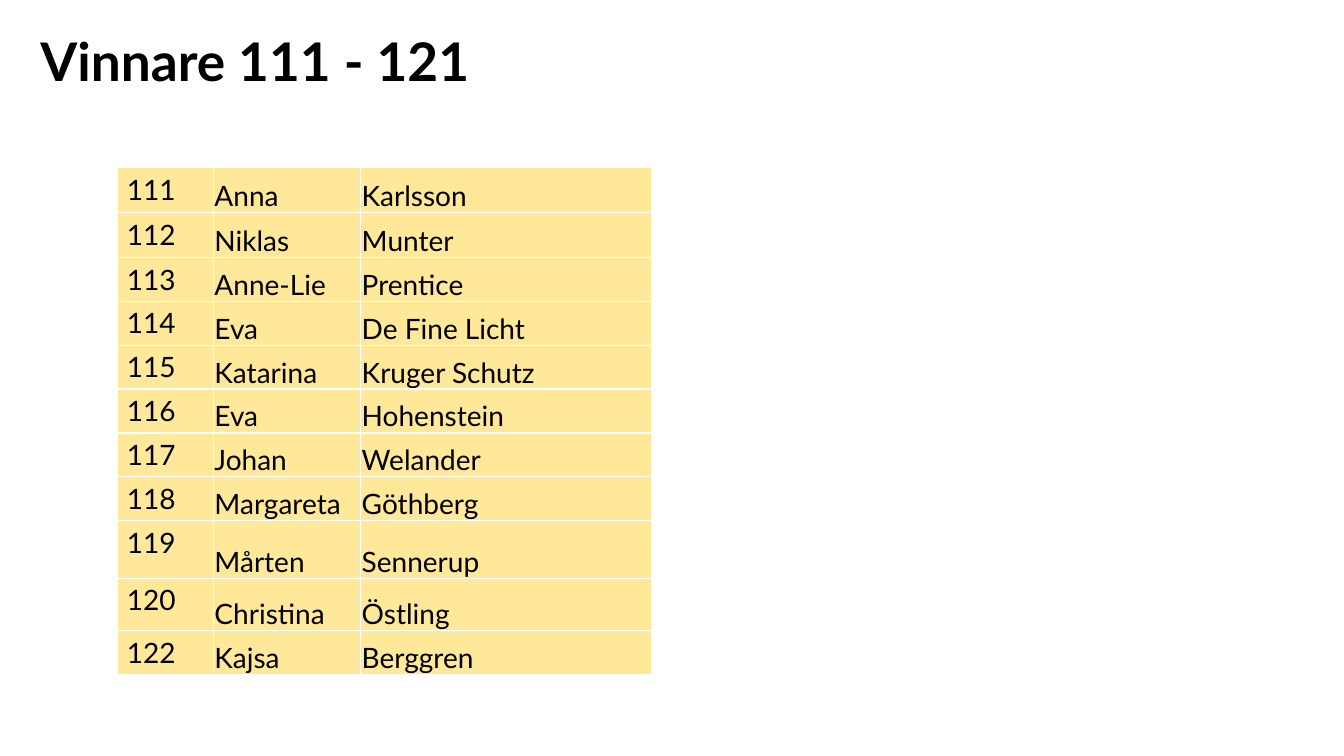
from lxml.etree import SubElement
from pptx import Presentation
from pptx.dml.color import RGBColor
from pptx.enum.text import MSO_ANCHOR, MSO_AUTO_SIZE, PP_ALIGN
from pptx.oxml.ns import qn
from pptx.util import Pt

FONT = "Lato"
BLACK, WHITE, YELLOW = "000000", "FFFFFF", "FFE899"

WINNERS = [
    ("111", "Anna", "Karlsson"),
    ("112", "Niklas", "Munter"),
    ("113", "Anne-Lie", "Prentice"),
    ("114", "Eva", "De Fine Licht"),
    ("115", "Katarina", "Kruger Schutz"),
    ("116", "Eva", "Hohenstein"),
    ("117", "Johan", "Welander"),
    ("118", "Margareta", "Göthberg"),
    ("119", "Mårten", "Sennerup"),
    ("120", "Christina", "Östling"),
    ("122", "Kajsa", "Berggren"),
]
COLUMN_WIDTHS = [69, 105.2, 207.4]
ROW_HEIGHT = 31.4
TALLER_ROWS = {"111": 32, "112": 32, "119": 41, "120": 37.6}


def color(hex_value):
    return RGBColor.from_string(hex_value)


def add_run(paragraph, text, size, bold=False):
    run = paragraph.add_run()
    run.text = text
    run.font.name = FONT
    run.font.size = Pt(size)
    run.font.bold = bold
    run.font.color.rgb = color(BLACK)


def set_margins(holder, left, top, right, bottom):
    holder.margin_left, holder.margin_top = Pt(left), Pt(top)
    holder.margin_right, holder.margin_bottom = Pt(right), Pt(bottom)


def add_title(slide, text):
    title = slide.shapes.title
    title.left, title.top = Pt(28.8), Pt(0)
    title.width, title.height = Pt(811.4), Pt(119.5)
    frame = title.text_frame
    frame.word_wrap = True
    frame.auto_size = MSO_AUTO_SIZE.NONE
    frame.vertical_anchor = MSO_ANCHOR.TOP
    set_margins(frame, 0, 20, 0, 0)
    paragraph = frame.paragraphs[0]
    paragraph.alignment = PP_ALIGN.LEFT
    add_run(paragraph, text, 38, bold=True)


def add_borders(cell, hex_value, width):
    properties = cell._tc.get_or_add_tcPr()
    for side in ("a:lnL", "a:lnR", "a:lnT", "a:lnB"):
        line = SubElement(properties, qn(side), w=str(Pt(width)))
        fill = SubElement(line, qn("a:solidFill"))
        SubElement(fill, qn("a:srgbClr"), val=hex_value)


def fill_cell(cell, text, is_name):
    add_borders(cell, WHITE, 1)
    cell.fill.solid()
    cell.fill.fore_color.rgb = color(YELLOW)
    if is_name:
        cell.vertical_anchor = MSO_ANCHOR.BOTTOM
        set_margins(cell, 0.7, 0.7, 0.7, 0)
    add_run(cell.text_frame.paragraphs[0], text, 20)


def add_winner_table(slide):
    heights = [TALLER_ROWS.get(number, ROW_HEIGHT) for number, *_ in WINNERS]
    table = slide.shapes.add_table(
        len(WINNERS), len(COLUMN_WIDTHS), Pt(83.5), Pt(119.8),
        Pt(sum(COLUMN_WIDTHS)), Pt(sum(heights))).table
    table.first_row = table.horz_banding = False
    for column, width in zip(table.columns, COLUMN_WIDTHS):
        column.width = Pt(width)
    for row, height, winner in zip(table.rows, heights, WINNERS):
        row.height = Pt(height)
        for index, text in enumerate(winner):
            fill_cell(row.cells[index], text, is_name=index > 0)


def main():
    presentation = Presentation()
    presentation.slide_width, presentation.slide_height = Pt(960), Pt(540)
    slide = presentation.slides.add_slide(presentation.slide_layouts[5])
    add_title(slide, "Vinnare 111 - 121")
    add_winner_table(slide)
    presentation.save("out.pptx")


if __name__ == "__main__":
    main()
